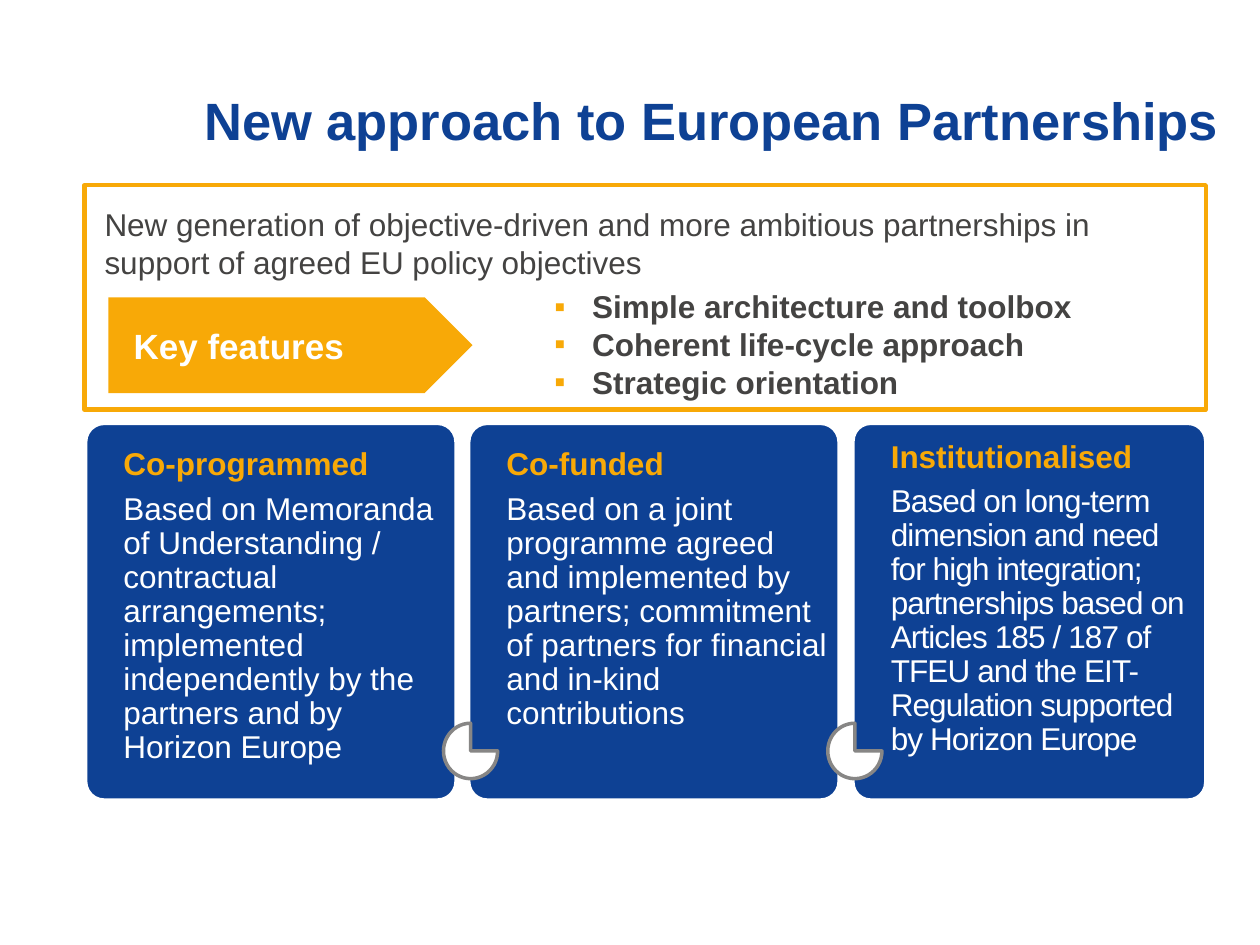
import pptx
import pptx.util
import pptx.dml.color
import pptx.enum.shapes
import pptx.enum.text
import pptx.oxml
import pptx.oxml.ns

Inches, Pt = pptx.util.Inches, pptx.util.Pt
MSO_SHAPE = pptx.enum.shapes.MSO_SHAPE
MSO_ANCHOR = pptx.enum.text.MSO_ANCHOR
COLORS = {"blue": "0E4194", "orange": "F8A907", "white": "FFFFFF",
          "text": "444342", "gray": "878685"}


def add_shape(kind, x, y, w, h, fill, line=None, width=2):
    sp = slide.shapes.add_shape(kind, Inches(x), Inches(y), Inches(w), Inches(h))
    sp.shadow.inherit = False
    sp.fill.solid()
    sp.fill.fore_color.rgb = pptx.dml.color.RGBColor.from_string(COLORS[fill])
    if line:
        sp.line.color.rgb = pptx.dml.color.RGBColor.from_string(COLORS[line])
        sp.line.width = Pt(width)
    else:
        sp.line.fill.background()
    return sp


def format_text(tf, size, color, bold=False, insets=(0.1, 0.05, 0.1, 0.05), anchor=MSO_ANCHOR.TOP):
    tf.word_wrap = True
    tf.auto_size = pptx.enum.text.MSO_AUTO_SIZE.NONE
    tf.vertical_anchor = anchor
    tf.margin_left, tf.margin_top, tf.margin_right, tf.margin_bottom = map(Inches, insets)
    for p in tf.paragraphs:
        p.alignment = pptx.enum.text.PP_ALIGN.LEFT
        p.space_before = Pt(0)
        for r in p.runs:
            r.font.name = "Arial"
            r.font.size = Pt(size)
            r.font.bold = bold
            r.font.color.rgb = pptx.dml.color.RGBColor.from_string(COLORS[color])


prs = pptx.Presentation()
prs.slide_width, prs.slide_height = Inches(10), Inches(7.5)
slide = prs.slides.add_slide(prs.slide_layouts[1])

title = slide.shapes.title
title.left, title.top, title.width, title.height = map(Inches, (1.52, 0.55, 8.4, 0.79))
title.text_frame.text = "New approach to European Partnerships"
format_text(title.text_frame, 30, "blue", True, anchor=MSO_ANCHOR.MIDDLE)
title.text_frame.margin_right = 0

CARDS = [
    (0.68, 2.94, 0.98, 2.48, 0.12, 0, "Co-programmed",
     "Based on Memoranda of Understanding / contractual arrangements; implemented "
     "independently by the partners and by Horizon Europe"),
    (3.72, 2.94, 4.02, 2.56, 0.12, 0, "Co-funded",
     "Based on a joint programme agreed and implemented by partners; commitment of "
     "partners for financial and in-kind contributions"),
    (6.77, 2.80, 7.07, 2.43, 0.06, -50, "Institutionalised",
     "Based on long-term dimension and need for high integration; partnerships based on "
     "Articles 185 / 187 of TFEU and the EIT-Regulation supported by Horizon Europe"),
]
for i, (x, w, text_x, text_w, inset, spacing, heading, detail) in enumerate(CARDS):
    card = add_shape(MSO_SHAPE.ROUNDED_RECTANGLE, x, 3.36, w, 2.99, "blue", "white")
    card.adjustments[0] = 0.05
    if i:
        add_shape(MSO_SHAPE.PIE, x - 0.2, 5.74, 0.43, 0.44, "white", "gray")
    box = slide.shapes.add_textbox(Inches(text_x), Inches(3.44), Inches(text_w), Inches(2.91))
    tf = box.text_frame
    tf.text = f"{heading}\n{detail}"
    format_text(tf, 18, "white", insets=(0, inset, 0, 0))
    for p in tf.paragraphs:
        p.line_spacing = 0.9
        p.space_after = Pt(6)
    font = tf.paragraphs[0].runs[0].font
    font.bold = True
    font.color.rgb = pptx.dml.color.RGBColor.from_string(COLORS["orange"])
    if spacing:
        tf.paragraphs[1].runs[0].font._element.set("spc", str(spacing))

frame = add_shape(MSO_SHAPE.RECTANGLE, 0.67, 1.47, 8.9, 1.78, "white", "orange", 2.5)
frame.text_frame.text = ("New generation of objective-driven and more ambitious partnerships "
                         "in support of agreed EU policy objectives")
format_text(frame.text_frame, 18, "text", insets=(0.16, 0.16, 0.16, 0.05))

arrow = add_shape(MSO_SHAPE.PENTAGON, 0.86, 2.36, 2.89, 0.76, "orange")
arrow.text_frame.text = "Key features"
format_text(arrow.text_frame, 20, "white", True, (0.2, 0.05, 0.1, 0.05), MSO_ANCHOR.MIDDLE)

body = slide.placeholders[1]
slide.shapes._spTree.append(body._element)
body.left, body.top, body.width, body.height = map(Inches, (3.93, 2.23, 5.6, 1))
tf = body.text_frame
tf.text = "Simple architecture and toolbox\nCoherent life-cycle approach\nStrategic orientation"
format_text(tf, 18, "text", True)
ns = pptx.oxml.ns.nsdecls("a")
for p in tf.paragraphs:
    pPr = p._p.get_or_add_pPr()
    pPr.set("marL", str(Inches(0.67)))
    pPr.set("indent", str(Inches(-0.3)))
    for xml in (f'<a:buClr {ns}><a:srgbClr val="{COLORS["orange"]}"/></a:buClr>',
                f'<a:buFont {ns} typeface="Arial"/>',
                f'<a:buChar {ns} char="▪"/>'):
        pPr.append(pptx.oxml.parse_xml(xml))

prs.save("out.pptx")
